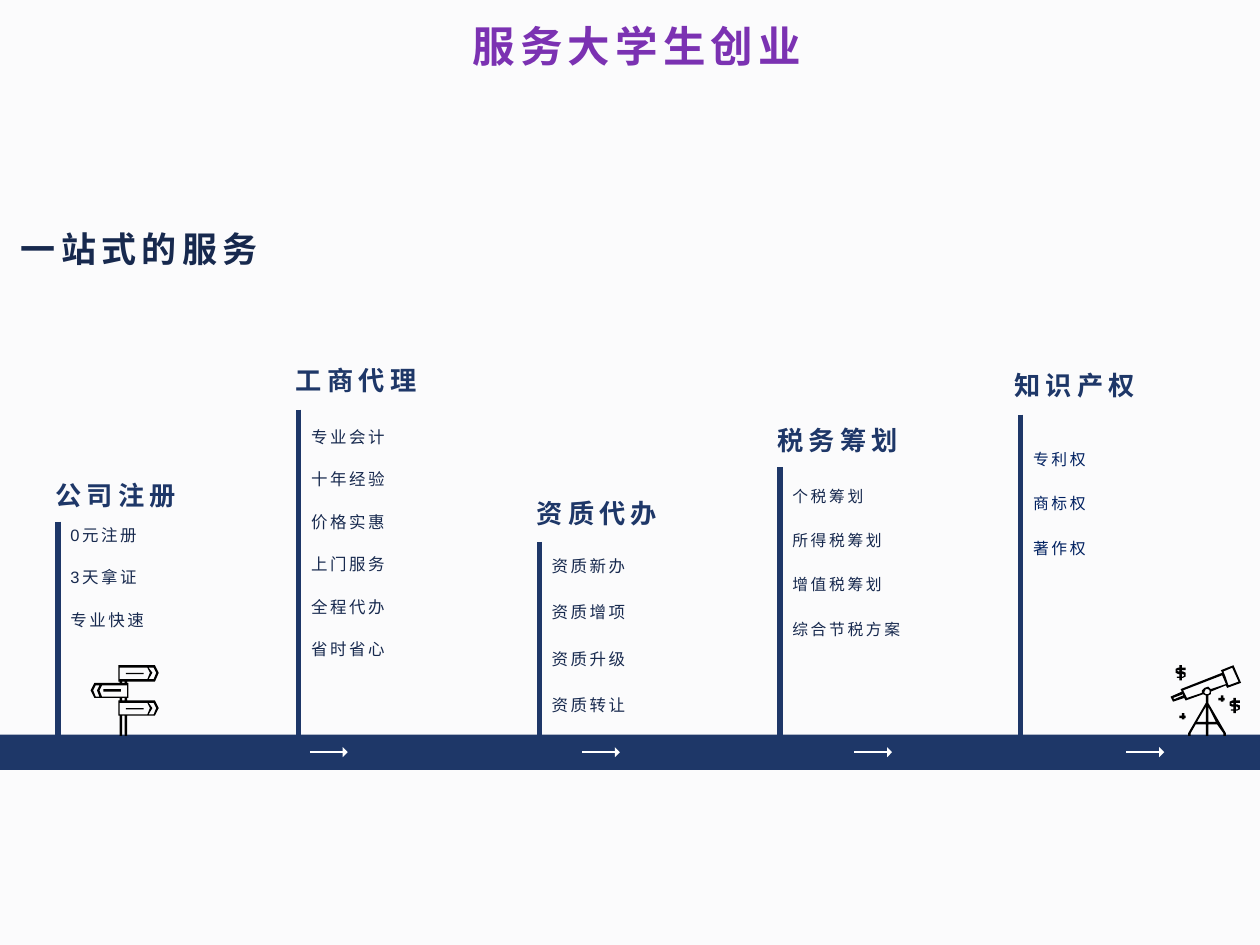
from lxml.etree import SubElement
from pptx import Presentation
from pptx.dml.color import RGBColor
from pptx.enum.shapes import MSO_CONNECTOR, MSO_SHAPE
from pptx.enum.text import MSO_ANCHOR, MSO_AUTO_SIZE, PP_ALIGN
from pptx.oxml.ns import qn
from pptx.util import Inches, Pt

NAVY, INK, WHITE, BLACK = "1E3768", "17294E", "FFFFFF", "000000"
TITLE = "服务大学生创业"
SUBTITLE = "一站式的服务"

COLUMNS = [
    dict(head="公司注册", head_y=3.73, bar_y=4.14, body_y=4.15, body_h=0.93, size=9.4, spacing=1.1,
         items=["0元注册", "3天拿证", "专业快速"]),
    dict(head="工商代理", head_y=2.82, bar_y=3.25, body_y=3.37, body_h=1.98, size=9.4, spacing=1.1,
         items=["专业会计", "十年经验", "价格实惠", "上门服务", "全程代办", "省时省心"]),
    dict(head="资质代办", head_y=3.87, bar_y=4.3, body_y=4.38, body_h=1.32, size=9.4, spacing=1.2,
         items=["资质新办", "资质增项", "资质升级", "资质转让"]),
    dict(head="税务筹划", head_y=3.29, bar_y=3.71, body_y=3.83, body_h=1.77, size=9, spacing=1.2,
         items=["个税筹划", "所得税筹划", "增值税筹划", "综合节税方案"]),
    dict(head="知识产权", head_y=2.86, bar_y=3.29, body_y=3.54, body_h=1.93, size=9, spacing=1.2,
         items=["专利权", "商标权", "著作权"], color="002060", inset=0.07),
]
COLUMN_X, COLUMN_STEP = 0.46, 1.91
BAND_Y, BAND_H = 5.83, 0.28
ARROW_X, ARROW_STEP, ARROW_COUNT = 2.46, 2.16, 4

DOLLAR = [
    [(0, 0), (2, 0), (2, 2), (5, 2), (5, 4), (2, 4), (2, 5), (3, 5), (5, 6), (5, 8), (5, 9),
     (3, 10), (2, 10), (2, 12), (0, 12), (0, 10), (-2, 10), (-2, 9), (0, 9), (0, 7), (-1, 7),
     (-3, 6), (-3, 4), (-3, 3), (-1, 2), (0, 2)],
    [(2, 7), (2, 9), (3, 9), (4, 8), (3, 7)],
    [(0, 4), (-1, 4), (-2, 4), (-1, 5), (0, 5)],
]
PLUS = [[(0, 0), (2, 0), (2, 2), (3, 2), (3, 4), (2, 4), (2, 5), (0, 5), (0, 4), (-2, 4),
         (-2, 2), (0, 2)]]
TELESCOPE = [
    [(979, 528), (985, 542), (974, 546), (973, 544), (961, 549), (961, 551), (959, 552),
     (959, 558), (973, 582), (973, 584), (971, 584), (971, 582), (966, 575), (959, 575),
     (959, 584), (957, 584), (957, 575), (949, 575), (945, 582), (945, 584), (943, 584),
     (943, 582), (957, 558), (957, 552), (955, 551), (941, 556), (940, 554), (931, 557),
     (929, 553), (938, 549), (937, 547), (970, 534), (969, 532)],
    [(978, 530), (971, 533), (973, 538), (975, 544), (983, 541)],
    [(970, 536), (939, 548), (942, 554), (954, 550), (954, 548), (956, 546), (959, 545),
     (961, 547), (973, 543)],
    [(957, 547), (956, 549), (956, 550), (957, 551), (959, 551), (960, 550), (960, 548),
     (959, 547)],
    [(939, 551), (931, 554), (932, 555), (939, 552)],
    [(957, 561), (950, 573), (957, 573)],
    [(959, 561), (959, 573), (965, 573)],
]
SIGN_DETAIL = [
    [(100, 534), (114, 534), (114, 535), (100, 535)],
    [(118, 530), (121, 534), (118, 539), (122, 539), (124, 534), (122, 530)],
    [(95, 530), (95, 539), (117, 539), (119, 534), (117, 530)],
]
SIGNPOST = [
    [(94, 528), (123, 528), (126, 534), (123, 541), (101, 541), (101, 542), (102, 542),
     (102, 554), (101, 554), (101, 556), (123, 556), (126, 562), (123, 568), (101, 568),
     (101, 584), (99, 584), (99, 568), (97, 568), (97, 584), (95, 584), (95, 568), (94, 568),
     (94, 556), (95, 556), (95, 554), (75, 554), (72, 548), (75, 542), (95, 542), (95, 541),
     (94, 541)],
    [(97, 541), (97, 542), (99, 542), (99, 541)],
    [(97, 554), (97, 556), (99, 556), (99, 554)],
    [(82, 547), (96, 547), (96, 549), (82, 549)],
    [(81, 544), (79, 548), (81, 553), (101, 553), (101, 544)],
    [(76, 544), (74, 548), (76, 553), (79, 553), (77, 548), (79, 544)],
]


def rgb(value):
    return RGBColor.from_string(value)


def shift(contours, dx, dy):
    return [[(x + dx, y + dy) for x, y in points] for points in contours]


def paint(sp, color):
    sp.fill.solid()
    sp.fill.fore_color.rgb = rgb(color)
    sp.line.fill.background()
    sp.shadow.inherit = False


def add_line(s, x1, y1, x2, y2, color, width):
    line = s.shapes.add_connector(MSO_CONNECTOR.STRAIGHT, *map(Inches, (x1, y1, x2, y2)))
    line.line.color.rgb = rgb(color)
    line.line.width = Pt(width)
    SubElement(line._element.spPr, qn("a:effectLst"))


def add_icon(s, contours):
    first, *others = contours
    builder = s.shapes.build_freeform(*first[0], scale=float(Inches(0.01)))
    builder.add_line_segments(first[1:])
    for points in others:
        builder.move_to(*points[0])
        builder.add_line_segments(points[1:])
    paint(builder.convert_to_shape(), BLACK)


def style(p, size, tracking, color=None, bold=False):
    p.font.size = Pt(size)
    p.font.name = "Arial"
    p.font.bold = bold
    if color:
        p.font.color.rgb = rgb(color)
    for r in p.runs:
        r._r.get_or_add_rPr().set("spc", str(int(tracking * 100)))


def frame(sp, insets, anchor=MSO_ANCHOR.TOP):
    tf = sp.text_frame
    tf.word_wrap = True
    tf.auto_size = MSO_AUTO_SIZE.NONE
    tf.vertical_anchor = anchor
    tf.margin_left, tf.margin_top, tf.margin_right, tf.margin_bottom = map(Inches, insets)
    return tf


def add_text(s, box, insets, lines, size, tracking, color, bold=False, spacing=1.0, gap=0,
             anchor=MSO_ANCHOR.TOP, align=PP_ALIGN.LEFT):
    tf = frame(s.shapes.add_textbox(*map(Inches, box)), insets, anchor)
    for i, text in enumerate(lines):
        p = tf.paragraphs[0] if i == 0 else tf.add_paragraph()
        p.text = text
        p.alignment = align
        p.line_spacing = spacing
        if i:
            p.space_before = Pt(gap)
        style(p, size, tracking, color, bold)


def add_title(s):
    sp = s.shapes.title
    sp.left, sp.top, sp.width, sp.height = map(Inches, (1.11, 0.09, 7.89, 0.54))
    tf = frame(sp, (0.07, 0.04, 0.07, 0.04), MSO_ANCHOR.MIDDLE)
    tf.text = TITLE
    p = tf.paragraphs[0]
    p.alignment = PP_ALIGN.CENTER
    p.line_spacing = 1.0
    style(p, 24.3, 3, bold=True)
    fill = p.runs[0].font.fill
    fill.gradient()
    fill.gradient_angle = 0
    for stop, color, position in zip(fill.gradient_stops, ("7B32B2", "401A5D"), (0, 1)):
        stop.color.rgb = rgb(color)
        stop.position = position


def add_column(s, x, c):
    add_line(s, x, c["bar_y"], x, 6.04, NAVY, 3)
    add_text(s, (x - 0.12, c["head_y"], 1.65, 0.39), (c.get("inset", 0.1), 0.05, 0.1, 0.05),
             [c["head"]], 15, 3, NAVY, bold=True, spacing=1.1)
    add_text(s, (x, c["body_y"], 1.55, c["body_h"]), (0.1, 0, 0.1, 0.05), c["items"],
             c["size"], 1.5, c.get("color", INK), spacing=c["spacing"],
             gap=round(1.15 * c["size"] * c["spacing"], 1))


def add_arrow(s, x):
    y = BAND_Y + BAND_H / 2
    add_line(s, x, y, x + 0.29, y, WHITE, 1)
    head = s.shapes.add_shape(MSO_SHAPE.ISOSCELES_TRIANGLE,
                              *map(Inches, (x + 0.24, y - 0.02, 0.08, 0.04)))
    head.rotation = 90
    paint(head, WHITE)


def main():
    prs = Presentation()
    prs.slide_width, prs.slide_height = Inches(10), Inches(7.5)
    s = prs.slides.add_slide(prs.slide_layouts[5])
    s.background.fill.solid()
    s.background.fill.fore_color.rgb = rgb("FBFBFC")
    add_title(s)
    for i, column in enumerate(COLUMNS):
        add_column(s, COLUMN_X + i * COLUMN_STEP, column)
    band = s.shapes.add_shape(MSO_SHAPE.RECTANGLE, *map(Inches, (0, BAND_Y, 10, BAND_H)))
    paint(band, NAVY)
    for i in range(ARROW_COUNT):
        add_arrow(s, ARROW_X + i * ARROW_STEP)
    add_icon(s, TELESCOPE + shift(DOLLAR, 936, 528) + shift(DOLLAR, 979, 554)
             + shift(PLUS, 938, 566) + shift(PLUS, 969, 552))
    add_icon(s, SIGNPOST + SIGN_DETAIL + shift(SIGN_DETAIL, 0, 28))
    add_text(s, (0.01, 1.7, 2.19, 0.54), (0.07, 0.04, 0.07, 0.04), [SUBTITLE], 20, 3, INK,
             bold=True, anchor=MSO_ANCHOR.MIDDLE, align=PP_ALIGN.CENTER)
    prs.save("out.pptx")


if __name__ == "__main__":
    main()
